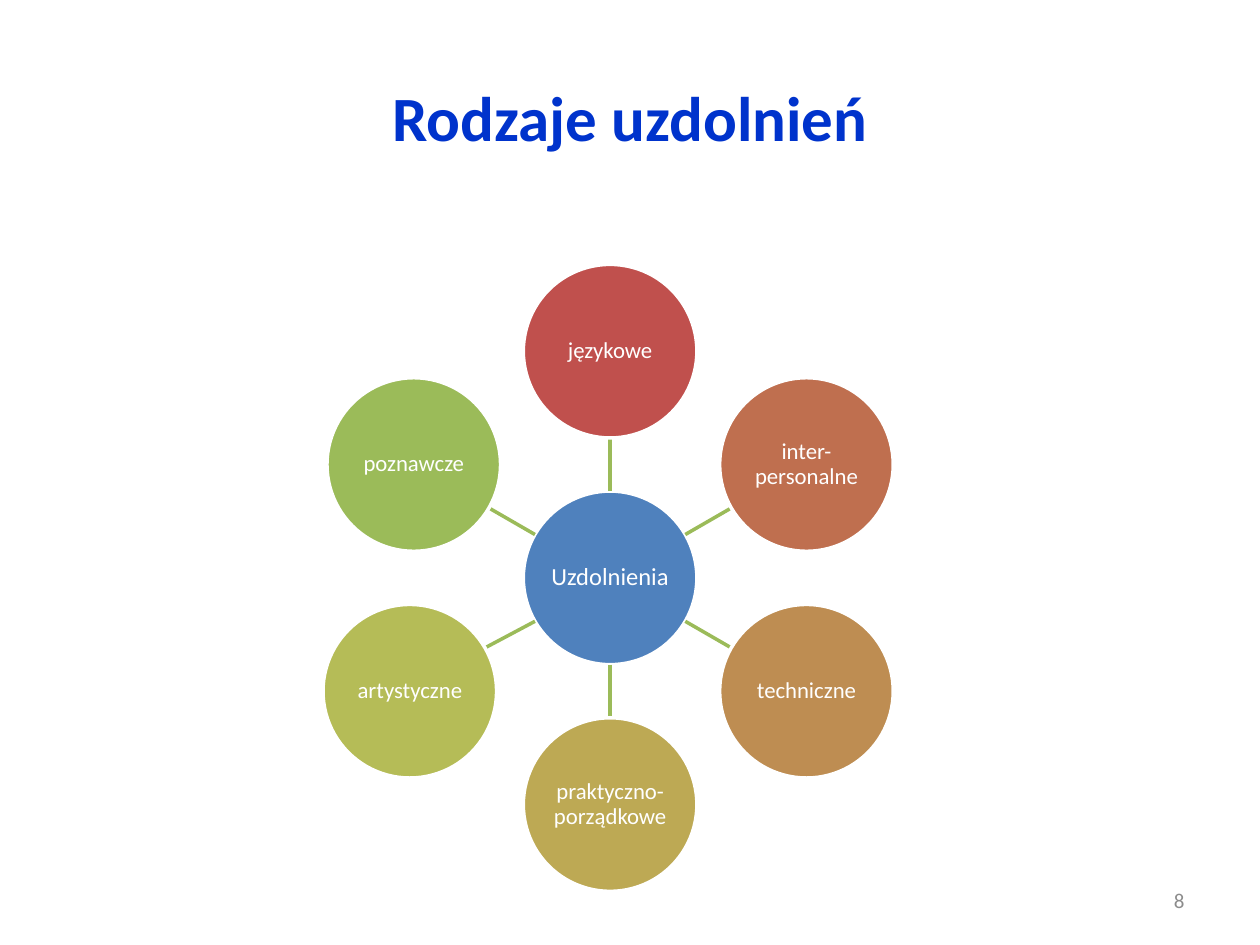
"""Build the slide showing kinds of talent as a radial diagram."""
from math import cos, radians, sin

from lxml.etree import SubElement
from pptx import Presentation
from pptx.dml.color import RGBColor
from pptx.enum.shapes import MSO_CONNECTOR, MSO_SHAPE
from pptx.enum.text import MSO_ANCHOR, PP_ALIGN
from pptx.oxml.ns import qn
from pptx.util import Cm, Pt

COLORS = {
    "title": "0033CC", "center": "4F81BD", "spoke": "9BBB59",
    "white": "FFFFFF", "number": "8C8C8C",
}
TALENTS = [
    ("językowe", "C0504D", 0),
    ("inter-\npersonalne", "BF6F4F", 0),
    ("techniczne", "BE8D52", 0),
    ("praktyczno-porządkowe", "BDA954", 0),
    ("artystyczne", "B5BC57", -0.08),
    ("poznawcze", "9BBB59", 0),
]
CX, CY, RADIUS, DIAMETER = 12.3, 11.65, 4.57, 3.5


class SlideBuilder:
    def __init__(self, prs, font="Calibri"):
        self.font = font
        self.s = prs.slides.add_slide(prs.slide_layouts[5])

    def add_text(self, tf, text, size, color, align=PP_ALIGN.CENTER, bold=False):
        tf.word_wrap = True
        tf.vertical_anchor = MSO_ANCHOR.MIDDLE
        p = tf.paragraphs[0]
        p.alignment = align
        for i, line in enumerate(text.split("\n")):
            if i:
                p.add_line_break()
            r = p.add_run()
            r.text = line
            r.font.name = self.font
            r.font.size = Pt(size)
            r.font.bold = bold
            r.font.color.rgb = RGBColor.from_string(color)
        return p

    def title(self, text):
        sp = self.s.shapes.title
        sp.left, sp.top, sp.width, sp.height = Cm(1.27), Cm(0.76), Cm(22.86), Cm(3.18)
        self.add_text(sp.text_frame, text, 36, COLORS["title"], bold=True)

    def circle(self, cx, cy, text, size, color):
        sp = self.s.shapes.add_shape(
            MSO_SHAPE.OVAL, Cm(cx - DIAMETER / 2), Cm(cy - DIAMETER / 2),
            Cm(DIAMETER), Cm(DIAMETER))
        sp.shadow.inherit = False
        sp.fill.solid()
        sp.fill.fore_color.rgb = RGBColor.from_string(color)
        sp.line.color.rgb = RGBColor.from_string(COLORS["white"])
        sp.line.width = Pt(2)
        tf = sp.text_frame
        tf.margin_left = tf.margin_right = tf.margin_top = tf.margin_bottom = Cm(0.02)
        self.add_text(tf, text, size, COLORS["white"]).line_spacing = 0.9

    def spoke(self, x1, y1, x2, y2):
        cn = self.s.shapes.add_connector(
            MSO_CONNECTOR.STRAIGHT, Cm(x1), Cm(y1), Cm(x2), Cm(y2))
        cn.line.color.rgb = RGBColor.from_string(COLORS["spoke"])
        cn.line.width = Pt(2)
        SubElement(cn._element.spPr, qn("a:effectLst"))

    def radial(self, center, talents):
        self.circle(CX, CY, center, 14, COLORS["center"])
        inner, outer = DIAMETER / 2, RADIUS - DIAMETER / 2
        for i, (text, color, shift) in enumerate(talents):
            angle = radians(360 / len(talents) * i - 90)
            dx, dy = cos(angle), sin(angle)
            self.spoke(CX + inner * dx, CY + inner * dy,
                       CX + outer * dx + shift, CY + outer * dy)
            self.circle(CX + RADIUS * dx + shift, CY + RADIUS * dy, text, 13, color)

    def number(self, text):
        sp = self.s.shapes.add_textbox(Cm(18.2), Cm(17.65), Cm(5.93), Cm(1.01))
        self.add_text(sp.text_frame, text, 12, COLORS["number"], PP_ALIGN.RIGHT)


def main():
    prs = Presentation()
    prs.slide_width, prs.slide_height = Cm(25.4), Cm(19.05)
    slide = SlideBuilder(prs)
    slide.title("Rodzaje uzdolnień")
    slide.radial("Uzdolnienia", TALENTS)
    slide.number("8")
    prs.save("out.pptx")


if __name__ == "__main__":
    main()
